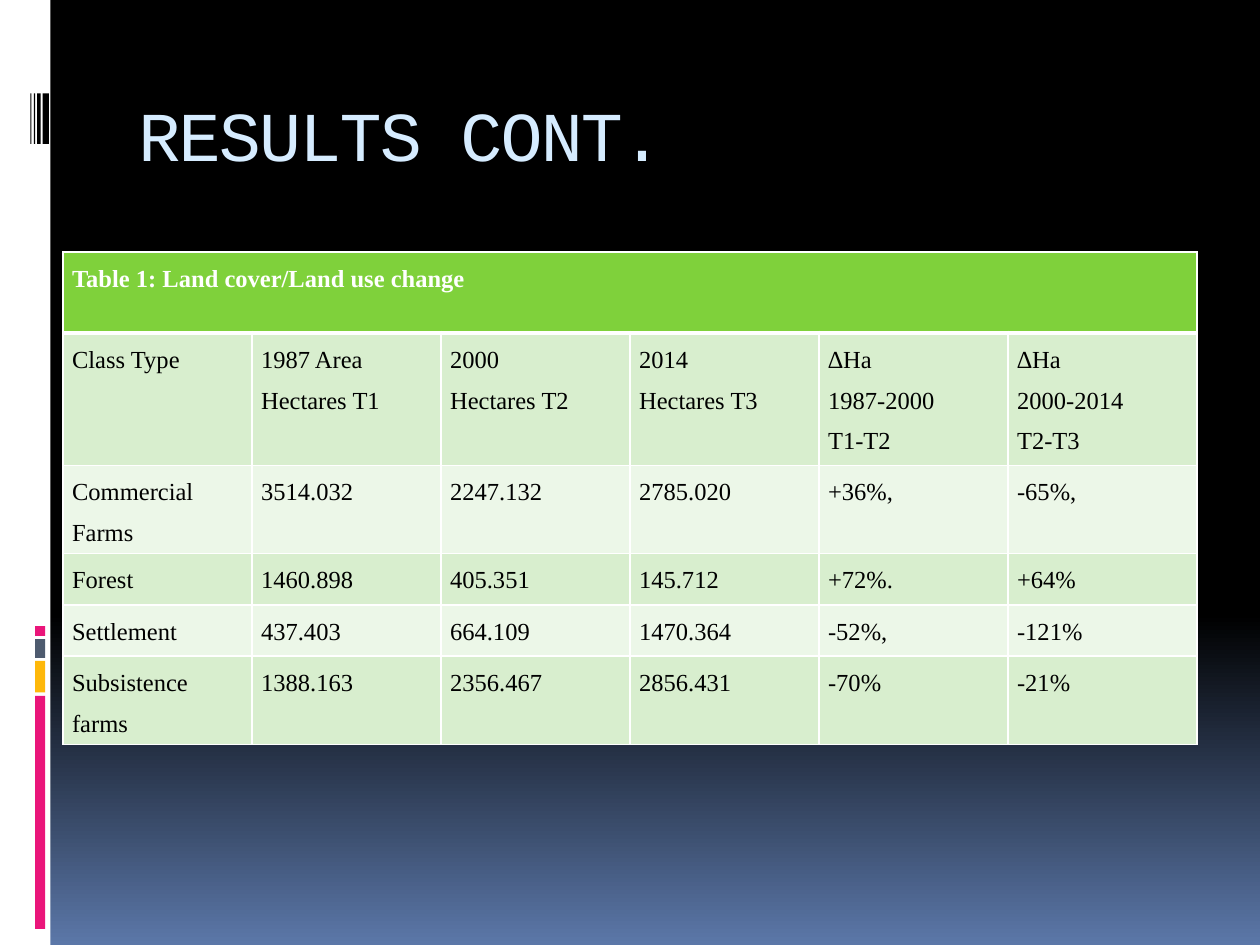
from dataclasses import dataclass

from lxml.etree import SubElement
from pptx import Presentation
from pptx.dml.color import RGBColor
from pptx.enum.shapes import MSO_SHAPE as Shape
from pptx.enum.text import MSO_ANCHOR as Anchor, PP_ALIGN as Align
from pptx.oxml.ns import qn
from pptx.util import Pt


@dataclass(frozen=True)
class Theme:
    black: str = "000000"
    white: str = "FFFFFF"
    sky: str = "5B77A8"
    pink: str = "EA157A"
    amber: str = "FEB80A"
    slate: str = "4E5B6F"
    title: str = "D6ECFF"
    header: str = "7FD13B"
    band_dark: str = "D8EECE"
    band_light: str = "ECF7E8"
    title_font: str = "Courier New"
    table_font: str = "Times New Roman"
    title_size: int = 40
    table_size: int = 14


THEME = Theme()
rgb = RGBColor.from_string

CAPTION = "Table 1: Land cover/Land use change"
ROWS = [
    ["Class Type", "1987 Area\nHectares T1", "2000\nHectares T2",
     "2014\nHectares T3", "∆Ha\n1987-2000\nT1-T2", "∆Ha\n2000-2014\nT2-T3"],
    ["Commercial Farms", "3514.032", "2247.132", "2785.020", "+36%,", "-65%,"],
    ["Forest", "1460.898", "405.351", "145.712", "+72%.", "+64%"],
    ["Settlement", "437.403", "664.109", "1470.364", "-52%,", "-121%"],
    ["Subsistence farms", "1388.163", "2356.467", "2856.431", "-70%", "-21%"],
]
ROW_HEIGHTS = [46.3, 69.5, 46.3, 29.3, 29.3, 46.3]
COL_WIDTH = 108


def set_background(s):
    fill = s.background.fill
    fill.gradient()
    fill.gradient_angle = 270
    start, end = fill.gradient_stops
    start.position, start.color.rgb = 0.65, rgb(THEME.black)
    end.position, end.color.rgb = 1, rgb(THEME.sky)


def add_bar(s, left, top, width, height, color):
    sp = s.shapes.add_shape(Shape.RECTANGLE, Pt(left), Pt(top), Pt(width), Pt(height))
    sp.shadow.inherit = False
    sp.fill.solid()
    sp.fill.fore_color.rgb = rgb(color)
    sp.line.fill.background()


def add_sidebar(s):
    add_bar(s, 0, 0, 28.8, 540, THEME.white)
    for top, height, color in [(397.6, 133.2, THEME.pink), (377.6, 18, THEME.amber),
                               (365.2, 10.8, THEME.slate), (357.8, 5.6, THEME.pink)]:
        add_bar(s, 20, top, 5.8, height, color)
    for left, width in [(24.4, 3.6), (21.2, 2), (19.4, 0.8), (17.4, 0.6)]:
        add_bar(s, left, 53.4, width, 28.8, THEME.black)


def style_font(font, name, size, color, bold=False):
    font.name, font.size, font.bold = name, Pt(size), bold
    font.color.rgb = rgb(color)


def add_title(s, text):
    tf = s.shapes.add_textbox(Pt(72), Pt(40.3), Pt(612), Pt(72)).text_frame
    tf.word_wrap = True
    tf.vertical_anchor = Anchor.MIDDLE
    p = tf.paragraphs[0]
    r = p.add_run()
    r.text = text
    style_font(p.font, THEME.title_font, THEME.title_size, THEME.title)
    r.font._element.set("spc", "-100")


def add_borders(cell, bottom):
    """Draw white 1 pt cell edges, with the given width at the bottom."""
    tc_pr = cell._tc.get_or_add_tcPr()
    for side, width in [("L", 1), ("R", 1), ("T", 1), ("B", bottom)]:
        ln = SubElement(tc_pr, qn(f"a:ln{side}"), w=str(Pt(width)))
        fill = SubElement(ln, qn("a:solidFill"))
        SubElement(fill, qn("a:srgbClr"), val=THEME.white)


def style_cell(cell, text, fill, color, header):
    add_borders(cell, 3 if header else 1)
    cell.fill.solid()
    cell.fill.fore_color.rgb = rgb(fill)
    cell.margin_left = cell.margin_right = Pt(5.2)
    cell.margin_top = cell.margin_bottom = 0
    cell.text_frame.text = text
    for p in cell.text_frame.paragraphs:
        p.alignment = Align.JUSTIFY
        p.line_spacing = 1.5
        style_font(p.font, THEME.table_font, THEME.table_size, color, header)


def add_change_table(s):
    cols = len(ROWS[0])
    rows = [[CAPTION] + [""] * (cols - 1)] + ROWS
    table = s.shapes.add_table(len(rows), cols, Pt(36), Pt(144),
                               Pt(cols * COL_WIDTH), Pt(sum(ROW_HEIGHTS))).table
    table.first_row = table.horz_banding = False
    for row, height in zip(table.rows, ROW_HEIGHTS):
        row.height = Pt(height)
    for i, texts in enumerate(rows):
        header = i == 0
        band = THEME.band_dark if i % 2 else THEME.band_light
        fill = THEME.header if header else band
        color = THEME.white if header else THEME.black
        for j, text in enumerate(texts):
            style_cell(table.cell(i, j), text, fill, color, header)
    table.cell(0, 0).merge(table.cell(0, cols - 1))


def main():
    prs = Presentation()
    prs.slide_width, prs.slide_height = Pt(720), Pt(540)
    s = prs.slides.add_slide(prs.slide_layouts[6])
    set_background(s)
    add_sidebar(s)
    add_title(s, "RESULTS CONT.")
    add_change_table(s)
    prs.save("out.pptx")


if __name__ == "__main__":
    main()
